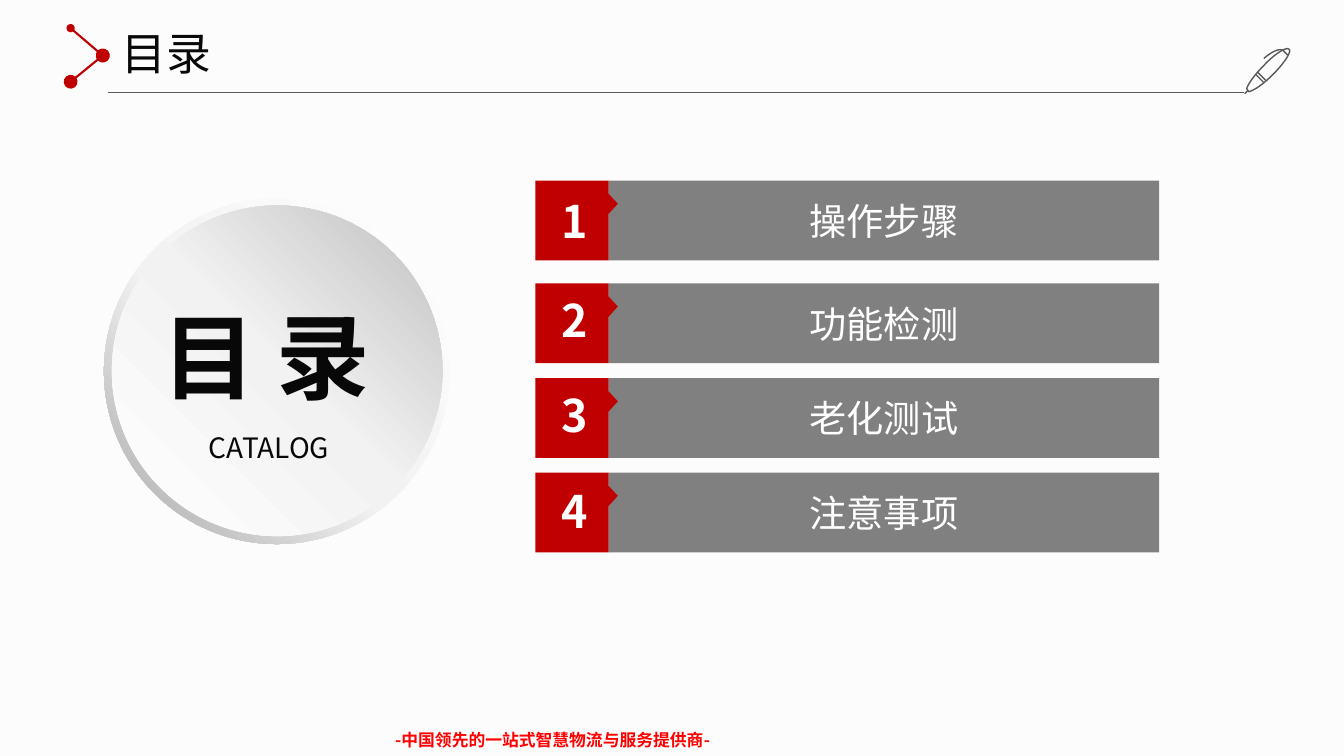
from lxml import etree
from pptx import Presentation
from pptx.dml.color import RGBColor
from pptx.enum.shapes import MSO_CONNECTOR, MSO_SHAPE
from pptx.enum.text import MSO_ANCHOR, MSO_AUTO_SIZE, PP_ALIGN
from pptx.oxml import parse_xml
from pptx.oxml.ns import nsdecls, qn
from pptx.util import Cm, Pt

LINE = MSO_CONNECTOR.STRAIGHT
RECT, OVAL = MSO_SHAPE.RECTANGLE, MSO_SHAPE.OVAL
RING, TAG = MSO_SHAPE.DONUT, MSO_SHAPE.RECTANGULAR_CALLOUT
TOP, MIDDLE = MSO_ANCHOR.TOP, MSO_ANCHOR.MIDDLE
FIXED = MSO_AUTO_SIZE.NONE
LEFT, CENTER = PP_ALIGN.LEFT, PP_ALIGN.CENTER
RIGHT, JUSTIFY = PP_ALIGN.RIGHT, PP_ALIGN.JUSTIFY

PAPER = RGBColor(0xFC, 0xFC, 0xFC)
INK = RGBColor(0x08, 0x08, 0x08)
WHITE = RGBColor(0xFF, 0xFF, 0xFF)
PALE = RGBColor(0xF2, 0xF2, 0xF2)
SILVER = RGBColor(0xBF, 0xBF, 0xBF)
STEEL = RGBColor(0xA6, 0xA6, 0xA6)
GRAY = RGBColor(0x80, 0x80, 0x80)
DARK = RGBColor(0x59, 0x59, 0x59)
RED = RGBColor(0xC0, 0x00, 0x00)
BRIGHT = RGBColor(0xFF, 0x00, 0x00)

# Pen strokes in hundredths of an inch: a start, then points or curves
PEN_LEFT, INCH = 30.48, 2.54
PEN = [
    [(54, 82), (46, 74)],
    [(48, 72), (56, 80)],
    [(79, 49), (77, 46, 65, 53, 54, 65), (44, 75, 38, 84, 37, 88),
     (39, 91), (44, 90, 53, 84, 63, 74), (74, 63, 82, 51, 79, 49)],
    [(38, 90), (35, 93)],
    [(78, 55), (73, 50), (73, 50, 68, 46, 54, 58)],
]

# Label, top of the bar, top of the number
ROWS = [("操作步骤", 4.55, 4.75), ("功能检测", 7.14, 7.24),
        ("老化测试", 9.53, 9.65), ("注意事项", 11.91, 12.07)]


def bend(start, curve, count=10):
    """Points along a cubic curve from start."""
    ends = [start, curve[:2], curve[2:4], curve[4:]]
    for i in range(1, count + 1):
        t = i / count
        parts = ((1 - t) ** 3, 3 * t * (1 - t) ** 2, 3 * t * t * (1 - t), t ** 3)
        yield tuple(sum(k * p[axis] for k, p in zip(parts, ends)) for axis in (0, 1))


def trace(stroke):
    """Turn a stroke into slide points."""
    dots = [stroke[0]]
    for move in stroke[1:]:
        dots.extend([move] if len(move) == 2 else bend(dots[-1], move))
    return [(Cm(PEN_LEFT + INCH * x / 100), Cm(INCH * y / 100)) for x, y in dots]


class Deck:
    def __init__(self, font):
        self.font = font
        self.prs = Presentation()
        self.prs.slide_width, self.prs.slide_height = Cm(33.87), Cm(19.05)
        self.slide = self.prs.slides.add_slide(self.prs.slide_layouts[5])
        self.shapes = self.slide.shapes
        fill = self.slide.background.fill
        fill.solid()
        fill.fore_color.rgb = PAPER

    def label(self, shape, text, size, color, align=LEFT, anchor=TOP,
              bold=False, pad=(0.25, 0.13)):
        frame = shape.text_frame
        frame.text = text
        frame.word_wrap, frame.auto_size = True, FIXED
        frame.vertical_anchor = anchor
        frame.margin_left = frame.margin_right = Cm(pad[0])
        frame.margin_top = frame.margin_bottom = Cm(pad[1])
        para = frame.paragraphs[0]
        para.alignment = align
        for run in para.runs:
            run.font.name, run.font.size = self.font, Pt(size)
            run.font.bold, run.font.color.rgb = bold, color
            east = etree.Element(qn("a:ea"), typeface=self.font)
            run.font._element.find(qn("a:latin")).addnext(east)

    def title(self, box, text, size, color):
        shape = self.shapes.title
        shape.left, shape.top, shape.width, shape.height = map(Cm, box)
        self.label(shape, text, size, color)

    def text(self, box, text, size, color, **style):
        self.label(self.shapes.add_textbox(*map(Cm, box)), text, size, color, **style)

    def shape(self, kind, box, color=None):
        shape = self.shapes.add_shape(kind, *map(Cm, box))
        shape.shadow.inherit = False
        shape.line.fill.background()
        if color is not None:
            shape.fill.solid()
            shape.fill.fore_color.rgb = color
        return shape

    def fade(self, kind, box, stops, angle):
        shape = self.shape(kind, box)
        marks = "".join(f'<a:gs pos="{at * 1000}"><a:srgbClr val="{color}"/></a:gs>'
                        for at, color in stops)
        grad = parse_xml(f'<a:gradFill {nsdecls("a")} rotWithShape="1">'
                         f'<a:gsLst>{marks}</a:gsLst>'
                         f'<a:lin ang="{angle * 60000}" scaled="0"/></a:gradFill>')
        shape._element.spPr.find(qn("a:prstGeom")).addnext(grad)
        return shape

    def line(self, start, end, color, width, dots=()):
        line = self.shapes.add_connector(LINE, *map(Cm, start + end))
        line.line.color.rgb, line.line.width = color, Pt(width)
        outline = line._element.spPr.find(qn("a:ln"))
        for name, size in zip(("a:headEnd", "a:tailEnd"), dots):
            etree.SubElement(outline, qn(name), type="oval", w=size, len=size)
        etree.SubElement(line._element.spPr, qn("a:effectLst"))

    def sketch(self, strokes, color, width):
        first, *rest = map(trace, strokes)
        form = self.shapes.build_freeform(*first[0], scale=1.0)
        form.add_line_segments(first[1:], close=False)
        for dots in rest:
            form.move_to(*dots[0])
            form.add_line_segments(dots[1:], close=False)
        shape = form.convert_to_shape()
        shape.shadow.inherit = False
        shape.fill.background()
        shape.line.color.rgb, shape.line.width = color, Pt(width)


def main():
    deck = Deck("Noto Sans CJK SC")

    # Header
    deck.line((2.72, 2.34), (31.34, 2.34), DARK, 0.75)
    deck.sketch(PEN, DARK, 1)
    deck.line((1.78, 0.71), (2.59, 1.4), RED, 1.5, ("med", "lg"))
    deck.line((2.59, 1.4), (1.78, 2.06), RED, 1.5, ("lg", "lg"))
    deck.title((2.82, 0.53, 16.18, 1.63), "目录", 32, INK)

    # Numbered rows
    for number, (name, top, mark) in enumerate(ROWS, 1):
        bar = deck.shape(RECT, (15.34, top, 13.87, 2.01), GRAY)
        deck.label(bar, name, 26.6, WHITE, align=CENTER, anchor=MIDDLE)
        tag = deck.shape(TAG, (13.41, top + 0.08, 2.01, 1.85), RED)
        tag.rotation = 270
        tag.adjustments[0] = 0.21
        deck.text((13.74, mark, 1.32, 1.63), str(number), 32, WHITE,
                  align=RIGHT, bold=True)

    # Round badge
    ring = deck.fade(RING, (2.62, 5, 8.71, 8.71),
                     [(0, WHITE), (55, PALE), (100, STEEL)], 135)
    ring.adjustments[0] = 0.05
    deck.fade(OVAL, (2.82, 5.18, 8.33, 8.33),
              [(0, WHITE), (51, PALE), (100, SILVER)], 315)
    deck.text((3.84, 7.42, 6.12, 3.1), "目 录", 66.7, INK, bold=True)
    deck.text((4.24, 10.57, 5.08, 1.42), "CATALOG", 20, INK,
              align=CENTER, anchor=MIDDLE)

    # Footer
    deck.text((9.63, 18.26, 14.61, 0.79), "-中国领先的一站式智慧物流与服务提供商-",
              12, BRIGHT, align=JUSTIFY, anchor=MIDDLE, bold=True, pad=(0.33, 0.18))

    deck.prs.save("out.pptx")


if __name__ == "__main__":
    main()
